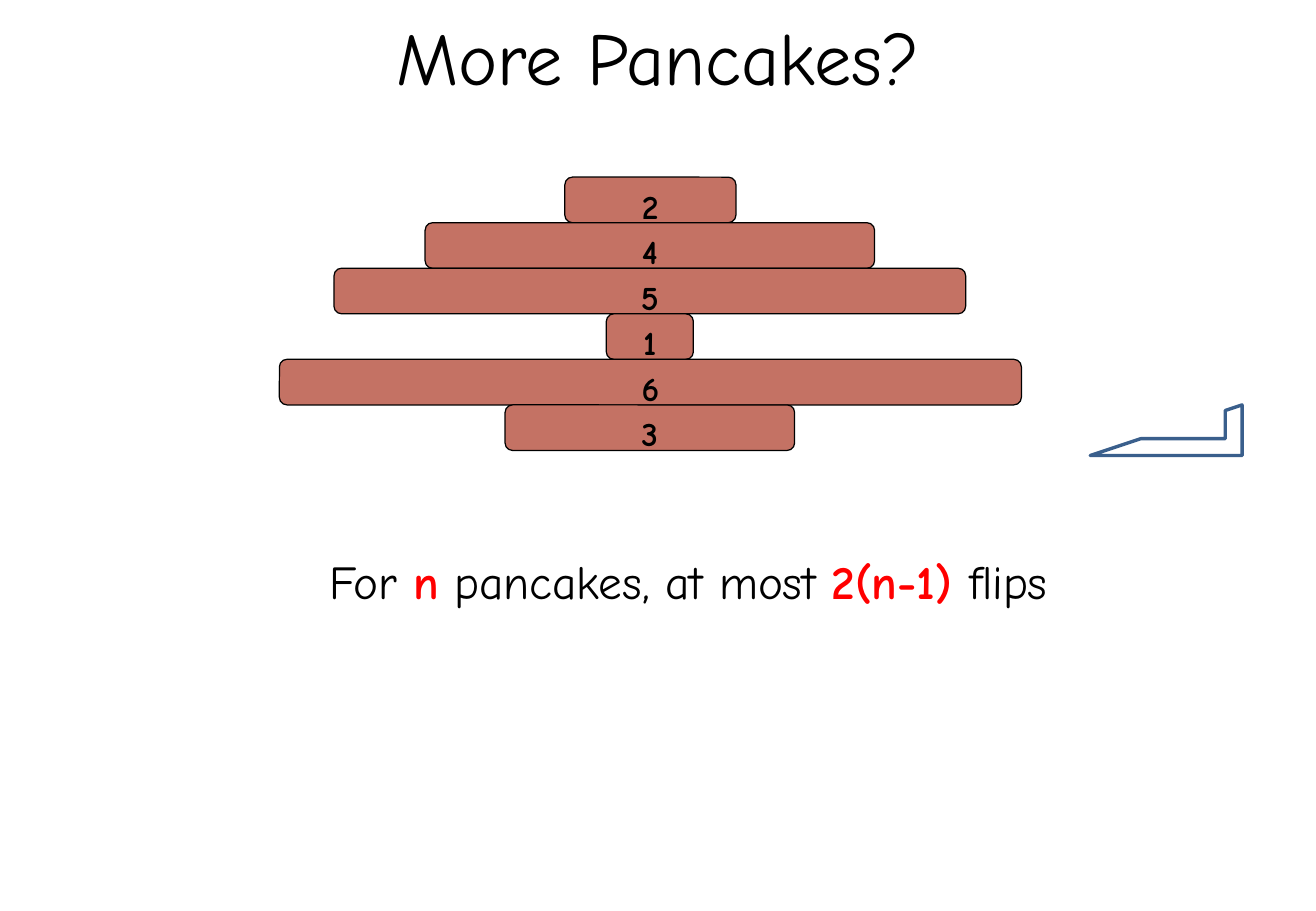
from pptx import Presentation
from pptx.dml.color import RGBColor
from pptx.enum.shapes import MSO_SHAPE
from pptx.enum.text import MSO_ANCHOR, MSO_AUTO_SIZE, PP_ALIGN
from pptx.util import Pt

PX = 7620  # 120 px to the inch
FONT = "Comic Neue"
COLORS = {"text": "000000", "accent": "FF0000", "pancake": "C47264", "spatula": "3A5F8C"}
ROUNDED, HALF_FRAME = MSO_SHAPE.ROUNDED_RECTANGLE, MSO_SHAPE.HALF_FRAME
CENTER = PP_ALIGN.CENTER
TOP, MIDDLE = MSO_ANCHOR.TOP, MSO_ANCHOR.MIDDLE
GROW = MSO_AUTO_SIZE.SHAPE_TO_FIT_TEXT

# Pancake number and width, from top to bottom
PANCAKES = [(2, 169), (4, 444), (5, 624), (1, 86), (6, 733), (3, 286)]


def color(name):
    return RGBColor.from_string(COLORS[name])


def emu(*lengths):
    return [length * PX for length in lengths]


def write(shape, parts, size, anchor=TOP, wrap=False):
    """Fill a shape with one centred line of (text, colour, bold) parts."""
    frame = shape.text_frame
    frame.word_wrap = wrap
    frame.vertical_anchor = anchor
    paragraph = frame.paragraphs[0]
    paragraph.alignment = CENTER
    for text, color_name, bold in parts:
        run = paragraph.add_run()
        run.text = text
        run.font.name = FONT
        run.font.size = Pt(size)
        run.font.bold = bold
        run.font.color.rgb = color(color_name)


def add_title(slide, left, top, width, height):
    title = slide.shapes.add_textbox(*emu(left, top, width, height))
    write(title, [("More Pancakes?", "text", False)], 44, MIDDLE, True)


def add_pancake_stack(slide, left, top, width, height):
    pancake_height = height // len(PANCAKES)
    for row, (number, pancake_width) in enumerate(PANCAKES):
        pancake_left = left + (width - pancake_width) // 2
        pancake = slide.shapes.add_shape(
            ROUNDED, *emu(pancake_left, top + row * pancake_height, pancake_width, pancake_height))
        pancake.shadow.inherit = False
        pancake.fill.solid()
        pancake.fill.fore_color.rgb = color("pancake")
        pancake.line.color.rgb = color("text")
        pancake.line.width = Pt(0.75)
        write(pancake, [(str(number), "text", True)], 20)


def add_spatula(slide, left, top, width, height):
    # The frame stands upright before its quarter turn about the centre
    frame_left = left + (width - height) // 2
    frame_top = top + (height - width) // 2
    spatula = slide.shapes.add_shape(HALF_FRAME, *emu(frame_left, frame_top, height, width))
    spatula.rotation = 90
    spatula._element.spPr.xfrm.set("flipH", "1")
    spatula.shadow.inherit = False
    spatula.fill.background()
    spatula.line.color.rgb = color("spatula")
    spatula.line.width = Pt(2)


def add_flip_bound(slide, left, top, width, height):
    bound = slide.shapes.add_textbox(*emu(left, top, width, height))
    write(bound, [
        ("For ", "text", False),
        ("n", "accent", True),
        (" pancakes, at most ", "text", False),
        ("2(n-1) ", "accent", True),
        ("flips", "text", False),
    ], 28)
    bound.text_frame.auto_size = GROW


def main():
    presentation = Presentation()
    presentation.slide_width, presentation.slide_height = emu(1300, 900)
    slide = presentation.slides.add_slide(presentation.slide_layouts[6])
    add_title(slide, 65, -20, 1170, 150)
    add_pancake_stack(slide, 276, 175, 733, 270)
    add_spatula(slide, 1077, 400, 150, 50)
    add_flip_bound(slide, 272, 540, 816, 68)
    presentation.save("out.pptx")


if __name__ == "__main__":
    main()
